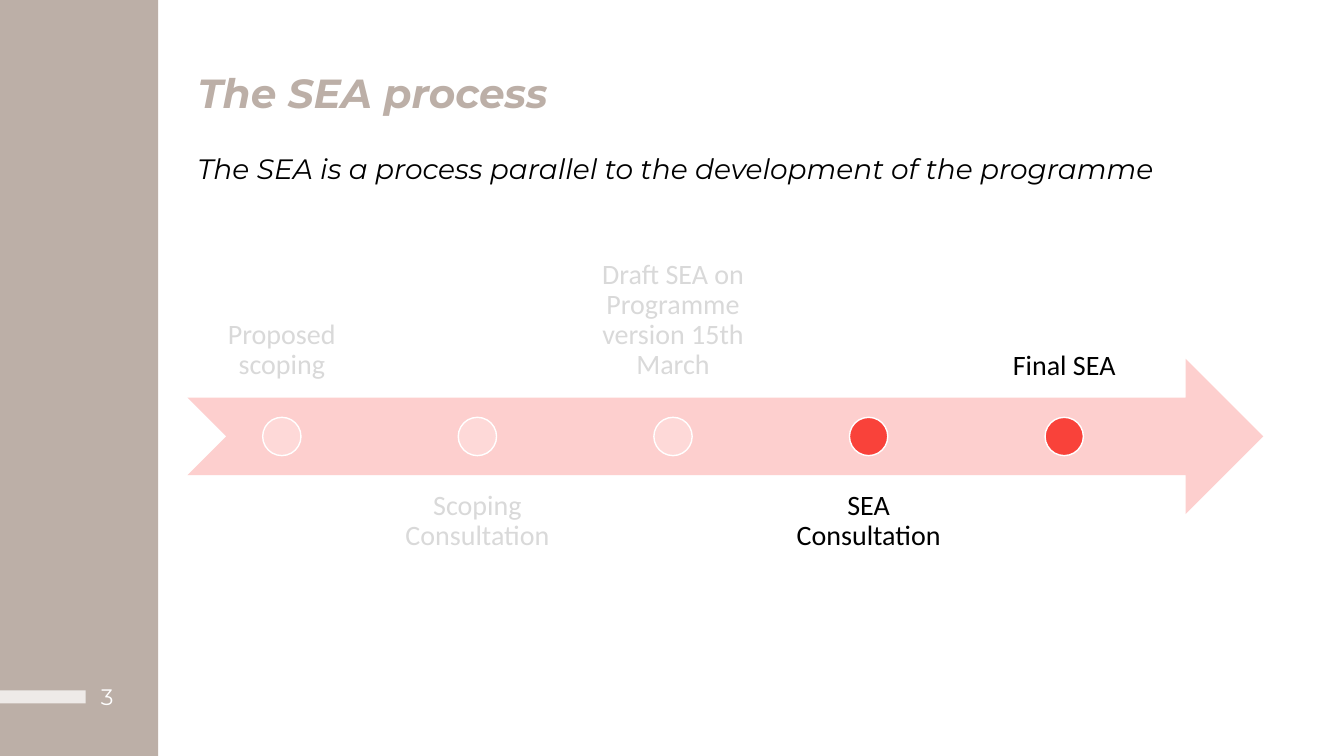
from lxml import etree
from pptx import Presentation
from pptx.dml.color import RGBColor
from pptx.enum.shapes import MSO_SHAPE
from pptx.enum.text import MSO_ANCHOR, PP_ALIGN
from pptx.oxml.ns import qn
from pptx.util import Pt

RECTANGLE = MSO_SHAPE.RECTANGLE
OVAL = MSO_SHAPE.OVAL
ARROW = MSO_SHAPE.NOTCHED_RIGHT_ARROW
TOP, MIDDLE, BOTTOM = MSO_ANCHOR.TOP, MSO_ANCHOR.MIDDLE, MSO_ANCHOR.BOTTOM
LEFT, CENTER = PP_ALIGN.LEFT, PP_ALIGN.CENTER

TITLE = "The SEA process"
SUBTITLE = "The SEA is a process parallel to the development of the programme"
PAGE_NUMBER = "3"
STEPS = [
    ("Proposed scoping", "past"),
    ("Scoping Consultation", "past"),
    ("Draft SEA on Programme version 15th March", "past"),
    ("SEA Consultation", "current"),
    ("Final SEA", "current"),
]

COLORS = {
    "white": "FFFFFF",
    "taupe": "BCAFA7",
    "black": "000000",
    "arrow": "FDCFCE",
}
STEP_COLORS = {
    "past": {"dot": "FED9D8", "label": "D9D9D9"},
    "current": {"dot": "F9423A", "label": "000000"},
}
HEADING_FONT, LABEL_FONT = "Montserrat", "Calibri"

PX = 9144
PAGE_WIDTH, PAGE_HEIGHT = 1333, 750
CONTENT_LEFT, CONTENT_WIDTH = 186, 1067
ARROW_TOP, ARROW_HEIGHT = 356, 154
LABEL_LEFT, LABEL_WIDTH, LABEL_HEIGHT = 187, 185, 154
LABEL_ABOVE, LABEL_BELOW = 240, 471
LABEL_GAP = 9
LABEL_INSET = 16
DOT_SIZE = 38


def emu(*lengths):
    return [round(length * PX) for length in lengths]


def add_block(page, kind, bounds, color, outline=None):
    block = page.shapes.add_shape(kind, *emu(*bounds))
    block.shadow.inherit = False
    block.fill.solid()
    block.fill.fore_color.rgb = RGBColor.from_string(color)
    if outline:
        block.line.color.rgb = RGBColor.from_string(outline)
        block.line.width = Pt(1)
    else:
        block.line.fill.background()
    return block


def write(box, text, font, size, color, anchor=TOP, align=LEFT, spacing=0.9,
          bold=False, italic=False, insets=(10, 5), wrap=True):
    frame = box.text_frame
    frame.word_wrap = wrap
    frame.vertical_anchor = anchor
    frame.margin_left = frame.margin_right = insets[0] * PX
    frame.margin_top = frame.margin_bottom = insets[1] * PX
    para = frame.paragraphs[0]
    para.alignment = align
    para.line_spacing = spacing
    span = para.add_run()
    span.text = text
    span.font.name = font
    span.font.size = Pt(size)
    span.font.bold = bold
    span.font.italic = italic
    span.font.color.rgb = RGBColor.from_string(color)


def add_text(page, bounds, *content, **style):
    write(page.shapes.add_textbox(*emu(*bounds)), *content, **style)


def add_sidebar(page):
    add_block(page, RECTANGLE, (0, 0, 157, PAGE_HEIGHT), COLORS["taupe"])
    add_text(page, (95, 673, 34, 36), PAGE_NUMBER, HEADING_FONT, 16, COLORS["white"],
             anchor=MIDDLE, spacing=1.0, insets=(5, 5), wrap=False)
    marker = add_block(page, RECTANGLE, (0, 685, 85, 13), COLORS["white"])
    fill_color = marker.fill._xPr.find(qn("a:solidFill"))[0]
    etree.SubElement(fill_color, qn("a:alpha"), val="75000")


def add_headings(page):
    title = page.shapes.title
    title.left, title.top, title.width, title.height = emu(CONTENT_LEFT, 68, CONTENT_WIDTH, 71)
    write(title, TITLE, HEADING_FONT, 29, COLORS["taupe"], bold=True, italic=True)
    add_text(page, (CONTENT_LEFT, 149, CONTENT_WIDTH, 71), SUBTITLE, HEADING_FONT, 20,
             COLORS["black"], italic=True)


def add_timeline(page):
    add_block(page, ARROW, (CONTENT_LEFT, ARROW_TOP, CONTENT_WIDTH, ARROW_HEIGHT), COLORS["arrow"])
    dot_top = ARROW_TOP + (ARROW_HEIGHT - DOT_SIZE) / 2
    for index, (label, state) in enumerate(STEPS):
        left = LABEL_LEFT + index * (LABEL_WIDTH + LABEL_GAP)
        top, anchor = (LABEL_BELOW, TOP) if index % 2 else (LABEL_ABOVE, BOTTOM)
        colors = STEP_COLORS[state]
        add_text(page, (left, top, LABEL_WIDTH, LABEL_HEIGHT), label, LABEL_FONT, 20,
                 colors["label"], anchor=anchor, align=CENTER,
                 insets=(LABEL_INSET, LABEL_INSET))
        dot_left = left + (LABEL_WIDTH - DOT_SIZE) / 2
        add_block(page, OVAL, (dot_left, dot_top, DOT_SIZE, DOT_SIZE), colors["dot"],
                  outline=COLORS["white"])


def main():
    deck = Presentation()
    deck.slide_width, deck.slide_height = emu(PAGE_WIDTH, PAGE_HEIGHT)
    page = deck.slides.add_slide(deck.slide_layouts[5])
    add_sidebar(page)
    add_headings(page)
    add_timeline(page)
    deck.save("out.pptx")


if __name__ == "__main__":
    main()
